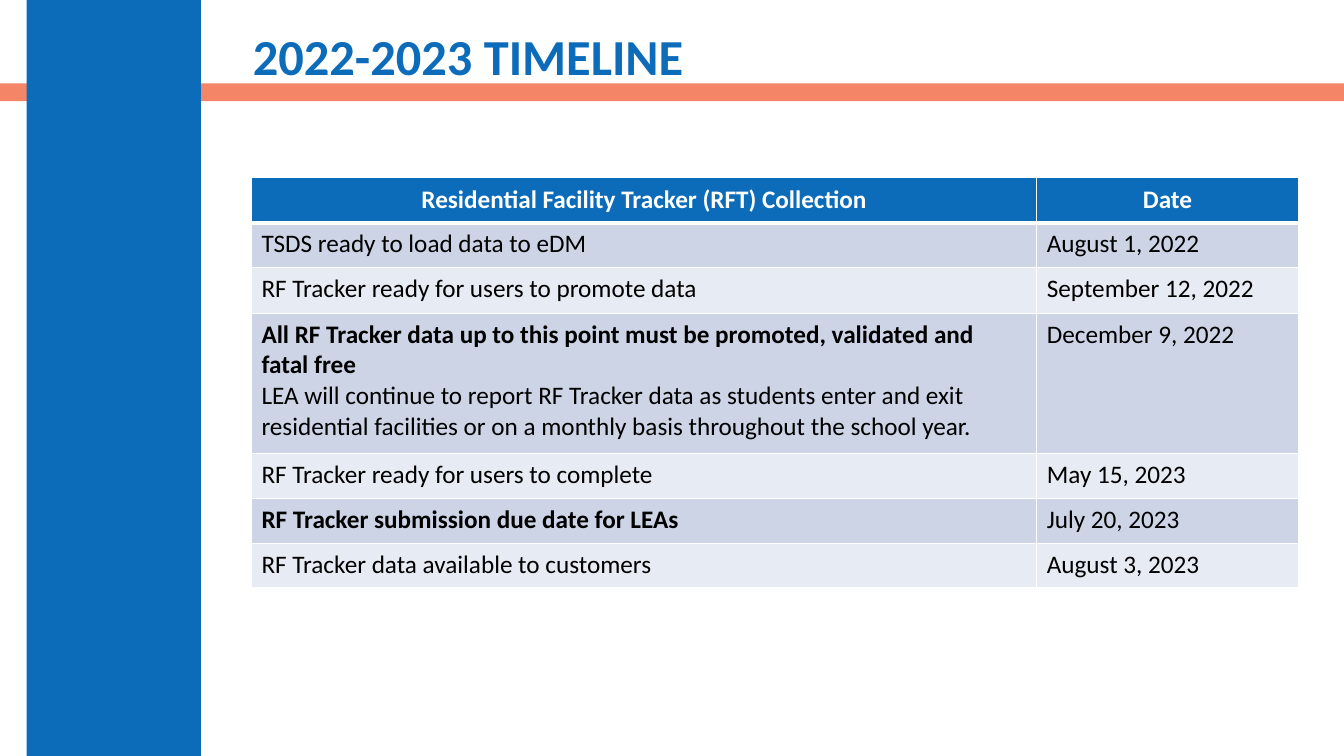
from lxml import etree
from pptx import Presentation
from pptx.dml.color import RGBColor
from pptx.enum import shapes, text
from pptx.oxml import ns
from pptx.util import Pt

BLUE = RGBColor(0x0D, 0x6C, 0xB9)
CORAL = RGBColor(0xF1, 0x60, 0x38)
WHITE = RGBColor(0xFF, 0xFF, 0xFF)
BLACK = RGBColor(0, 0, 0)
BANDS = [RGBColor(0xE7, 0xEB, 0xF3), RGBColor(0xCC, 0xD4, 0xE6)]
FONT = "Calibri"

TITLE = "2022-2023 TIMELINE"
HEAD = ("Residential Facility Tracker (RFT) Collection", "Date")
STEPS = [
    ("TSDS ready to load data to eDM", "August 1, 2022"),
    ("RF Tracker ready for users to promote data", "September 12, 2022"),
    ("All RF Tracker data up to this point must be promoted, validated and "
     "fatal free\vLEA will continue to report RF Tracker data as students "
     "enter and exit residential facilities or on a monthly basis throughout "
     "the school year.", "December 9, 2022"),
    ("RF Tracker ready for users to complete", "May 15, 2023"),
    ("RF Tracker submission due date for LEAs", "July 20, 2023"),
    ("RF Tracker data available to customers", "August 3, 2023"),
]
BOLD = ("All RF Tracker data", "RF Tracker submission due")
WIDTHS = [561, 186.7]
HEIGHTS = [32.1, 32.1, 32.6, 100, 32.6, 32, 31.6]
WIDE, HIGH = 960, 540


def style(run, size, color, bold):
    font = run.font
    font.name, font.size, font.bold = FONT, Pt(size), bold
    font.color.rgb = color


def add_bar(slide, box, color):
    bar = slide.shapes.add_shape(shapes.MSO_SHAPE.RECTANGLE, *map(Pt, box))
    bar.shadow.inherit = False
    bar.fill.solid()
    bar.fill.fore_color.rgb = color
    bar.line.fill.background()
    return bar


def add_edges(cell, base):
    props = cell._tc.get_or_add_tcPr()
    for side, width in (("L", 1), ("R", 1), ("T", 1), ("B", base)):
        line = etree.SubElement(props, ns.qn("a:ln" + side), w=str(Pt(width)))
        fill = etree.SubElement(line, ns.qn("a:solidFill"))
        etree.SubElement(fill, ns.qn("a:srgbClr"), val=str(WHITE))


def fill_cell(cell, words, row):
    top = row == 0
    add_edges(cell, 3 if top else 1)
    cell.fill.solid()
    cell.fill.fore_color.rgb = BLUE if top else BANDS[row % 2]
    cell.margin_left = cell.margin_right = Pt(7.2)
    cell.margin_top = cell.margin_bottom = Pt(4.2)
    cell.vertical_anchor = text.MSO_ANCHOR.MIDDLE if top else text.MSO_ANCHOR.TOP
    para = cell.text_frame.paragraphs[0]
    para.text = words
    para.alignment = text.PP_ALIGN.CENTER if top else text.PP_ALIGN.LEFT
    for run in para.runs:
        style(run, 18, WHITE if top else BLACK, top or run.text.startswith(BOLD))


def add_title(slide):
    title = slide.shapes.title
    title.left, title.top, title.width, title.height = map(Pt, (173.5, 13, 758, 59))
    frame = title.text_frame
    frame.text = TITLE
    frame.auto_size = text.MSO_AUTO_SIZE.NONE
    frame.vertical_anchor = text.MSO_ANCHOR.MIDDLE
    para = frame.paragraphs[0]
    para.alignment = text.PP_ALIGN.LEFT
    para.line_spacing = 0.9
    style(para.runs[0], 36, BLUE, True)
    slide.shapes.element.append(title.element)


def add_table(slide):
    rows = [HEAD] + STEPS
    box = map(Pt, (179.6, 127, sum(WIDTHS), sum(HEIGHTS)))
    table = slide.shapes.add_table(len(rows), len(HEAD), *box).table
    for col, width in zip(table.columns, WIDTHS):
        col.width = Pt(width)
    for r, (height, words) in enumerate(zip(HEIGHTS, rows)):
        table.rows[r].height = Pt(height)
        for c, word in enumerate(words):
            fill_cell(table.cell(r, c), word, r)


def main():
    deck = Presentation()
    deck.slide_width, deck.slide_height = Pt(WIDE), Pt(HIGH)
    slide = deck.slides.add_slide(deck.slide_layouts[5])
    stripe = add_bar(slide, (0, 59.5, WIDE, 12.8), CORAL)
    tint = stripe.element.spPr.find(".//" + ns.qn("a:srgbClr"))
    etree.SubElement(tint, ns.qn("a:alpha"), val="76000")
    add_bar(slide, (19, 0, 124.5, HIGH), BLUE)
    add_title(slide)
    add_table(slide)
    deck.save("out.pptx")


if __name__ == "__main__":
    main()
